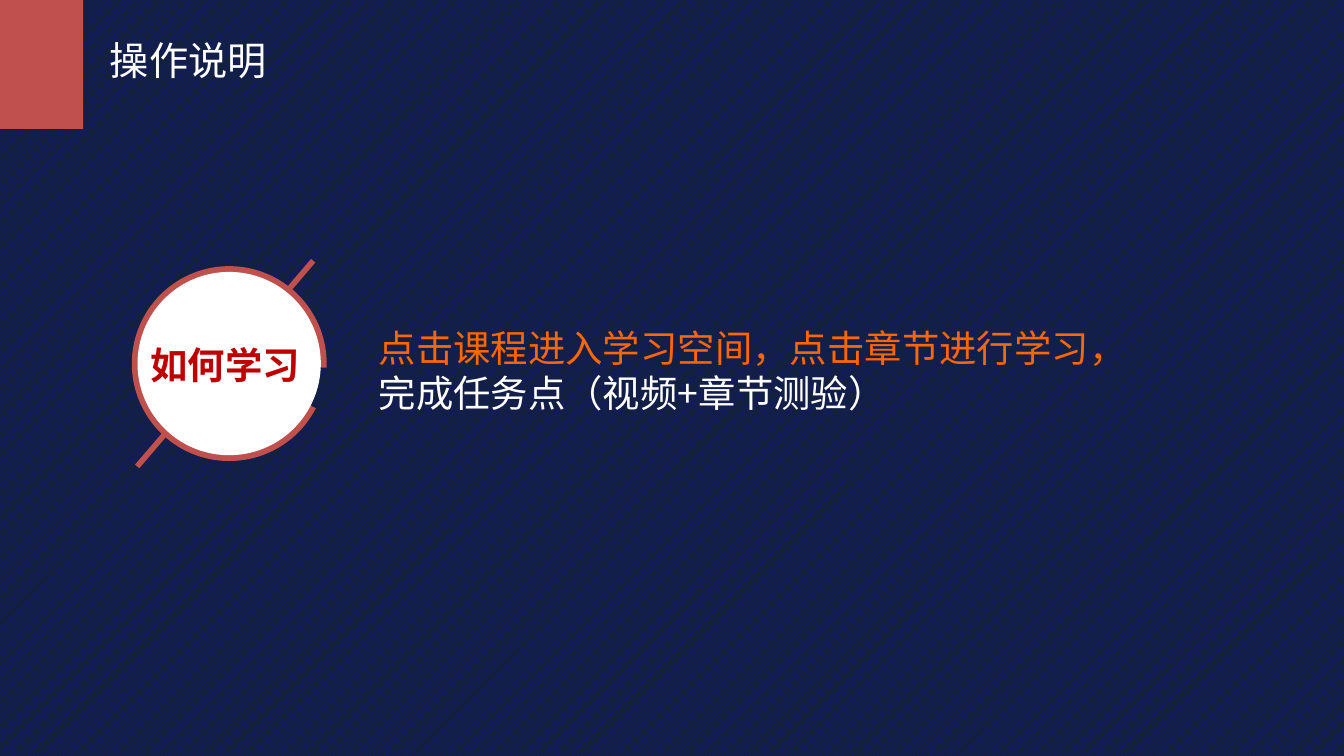
from lxml.etree import SubElement
from pptx import Presentation
from pptx.dml.color import RGBColor
from pptx.enum.dml import MSO_PATTERN
from pptx.enum.shapes import MSO_CONNECTOR, MSO_SHAPE
from pptx.enum.text import MSO_AUTO_SIZE
from pptx.oxml.ns import qn
from pptx.util import Pt

FONT = "Noto Sans CJK SC"
COLORS = {
    "stripe": "29008E",
    "navy": "0F243E",
    "brick": "C0504D",
    "white": "FFFFFF",
    "red": "C00000",
    "orange": "FF6600",
}


def color(name):
    return RGBColor.from_string(COLORS[name])


def add_form(shapes, kind, box, fill):
    form = shapes.add_shape(kind, *map(Pt, box))
    form.shadow.inherit = False
    form.fill.solid()
    form.fill.fore_color.rgb = color(fill)
    form.line.fill.background()
    return form


def add_text(shapes, box, runs, size, bold=False, before=0):
    frame = shapes.add_textbox(*map(Pt, box)).text_frame
    frame.word_wrap = True
    frame.auto_size = MSO_AUTO_SIZE.SHAPE_TO_FIT_TEXT
    para = frame.paragraphs[0]
    para.space_before = Pt(before)
    for text, tint in runs:
        run = para.add_run()
        run.text = text
        run.font.name = FONT
        run.font.size = Pt(size)
        run.font.bold = bold
        run.font.color.rgb = color(tint)
        SubElement(run.font._element, qn("a:ea"), typeface=FONT)


def add_back(slide):
    fill = slide.background.fill
    fill.patterned()
    fill.pattern = MSO_PATTERN.DARK_UPWARD_DIAGONAL
    fill.fore_color.rgb = color("stripe")
    fill.back_color.rgb = color("navy")


def add_header(shapes, left, top, width, height):
    add_form(shapes, MSO_SHAPE.RECTANGLE, (left, top, 44.6, height), "brick")
    add_text(shapes, (left + 51.8, top + 15.8, width - 51.8, 32.4),
             [("操作说明", "white")], 21)


def add_badge(shapes, left, top, side):
    group = shapes.add_group_shape().shapes
    slash = group.add_connector(
        MSO_CONNECTOR.STRAIGHT, Pt(left + 97.2), Pt(top - 2.9),
        Pt(left + 2.9), Pt(top + 107.3))
    slash.line.color.rgb = color("brick")
    slash.line.width = Pt(3)
    SubElement(slash._element.spPr, qn("a:effectLst"))

    ring = add_form(group, MSO_SHAPE.BLOCK_ARC, (left, top, side, side), "brick")
    for i, value in enumerate((16.37, 1.45, 0.1)):
        ring.adjustments[i] = value

    inset = 3.1
    disc = side - 2 * inset
    add_form(group, MSO_SHAPE.OVAL, (left + inset, top + inset, disc, disc), "white")
    add_text(group, (left + 2.9, top + 37.4, 151.9, 31.7),
             [("如何学习", "red")], 20, True, 9)


def add_guide(shapes, *box):
    add_text(shapes, box, [
        ("点击课程进入学习空间，点击章节进行学习，", "orange"),
        ("完成任务点（视频+章节测验）", "white"),
    ], 20)


def main():
    deck = Presentation()
    deck.slide_width = Pt(720)
    deck.slide_height = Pt(405)
    slide = deck.slides.add_slide(deck.slide_layouts[6])
    add_back(slide)
    add_header(slide.shapes, 0, 0, 288, 69.1)
    add_badge(slide.shapes, 70.6, 142.6, 104.4)
    add_guide(slide.shapes, 195.8, 170.6, 408.2, 79.9)
    deck.save("out.pptx")


if __name__ == "__main__":
    main()
